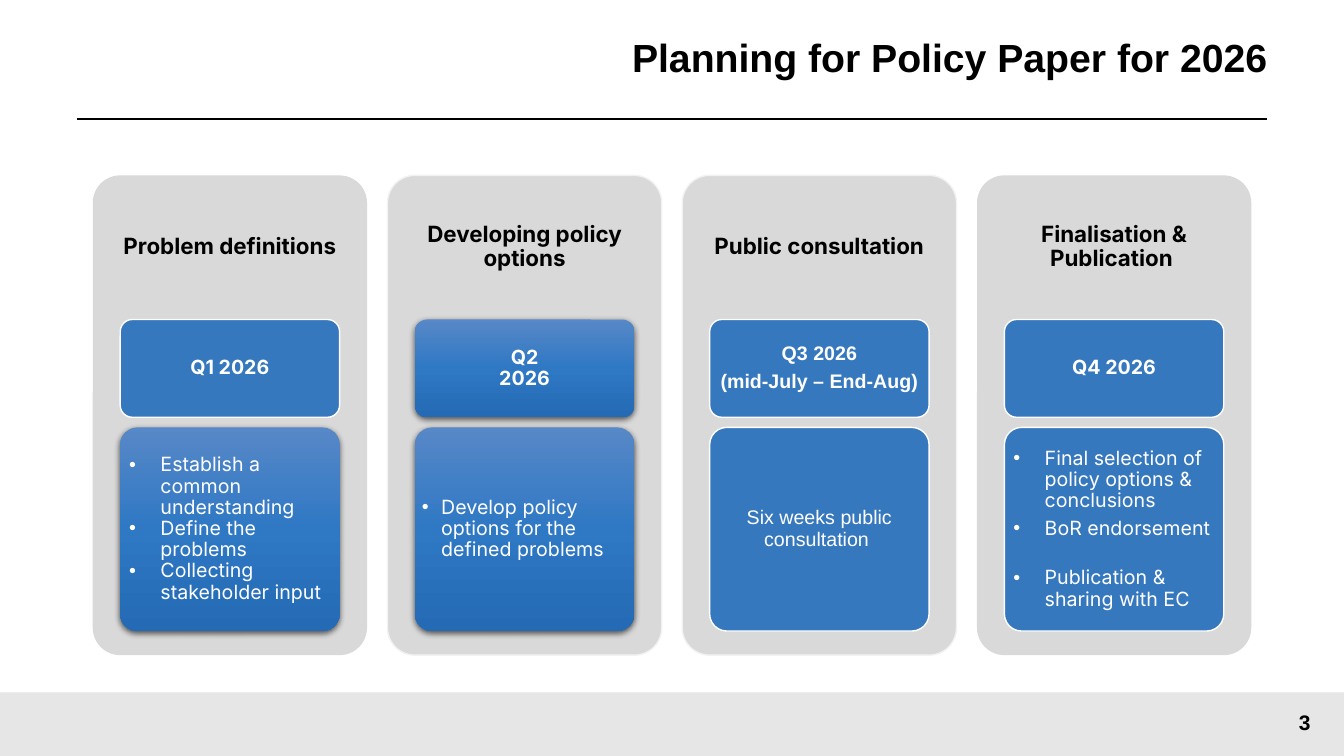
from pptx import Presentation
from pptx.dml.color import RGBColor
from pptx.enum.shapes import MSO_CONNECTOR, MSO_SHAPE
from pptx.enum.text import MSO_ANCHOR, PP_ALIGN
from pptx.oxml import parse_xml
from pptx.oxml.ns import nsdecls, qn
from pptx.util import Inches, Pt
from lxml.etree import SubElement

BLACK = RGBColor(0, 0, 0)
WHITE = RGBColor(255, 255, 255)
BAND = RGBColor(0xE6, 0xE6, 0xE6)
PANEL = RGBColor(0xD9, 0xD9, 0xD9)
EDGE = RGBColor(0xF2, 0xF2, 0xF2)
BLUE = RGBColor(0x36, 0x78, 0xBD)
STOPS = {0: "5788C7", 50: "2F78C4", 100: "246AB4"}


def draw(area, radius, fill=None, edge=None):
    """Add a rounded box; without a fill it gets the blue gradient and a shadow."""
    x, y, w, h = area
    kind = MSO_SHAPE.ROUNDED_RECTANGLE if radius else MSO_SHAPE.RECTANGLE
    box = slide.shapes.add_shape(kind, *map(Inches, area))
    if radius:
        box.adjustments[0] = radius / min(w, h)
    box.shadow.inherit = False
    props = box._element.spPr
    if fill is not None:
        box.fill.solid()
        box.fill.fore_color.rgb = fill
    else:
        stops = "".join(f'<a:gs pos="{at * 1000}"><a:srgbClr val="{tone}"/></a:gs>'
                        for at, tone in STOPS.items())
        props.insert(2, parse_xml(
            f'<a:gradFill {nsdecls("a")} rotWithShape="1"><a:gsLst>{stops}</a:gsLst>'
            '<a:lin ang="5400000" scaled="0"/></a:gradFill>'))
        props.find(qn("a:effectLst")).append(parse_xml(
            f'<a:outerShdw {nsdecls("a")} blurRad="{Pt(4.5)}" dist="{Pt(1.5)}" '
            'dir="5400000" algn="ctr" rotWithShape="0"><a:srgbClr val="000000">'
            '<a:alpha val="63000"/></a:srgbClr></a:outerShdw>'))
    if edge is not None:
        box.line.color.rgb = edge
        box.line.width = Pt(1)
    else:
        box.line.fill.background()
    return box


def write(box, lines, size, font, color, bold, side=0, foot=0, gaps=(), hang=0):
    """Fill a box with paragraphs; gaps go before the second and later ones."""
    frame = box.text_frame
    frame.word_wrap = True
    frame.vertical_anchor = MSO_ANCHOR.MIDDLE
    frame.margin_left = frame.margin_right = Inches(side)
    frame.margin_top, frame.margin_bottom = 0, Inches(foot)
    for i, line in enumerate(lines):
        para = frame.paragraphs[0] if i == 0 else frame.add_paragraph()
        para.text = line
        para.line_spacing = 0.9
        para.alignment = PP_ALIGN.LEFT if hang else PP_ALIGN.CENTER
        if i and gaps:
            para.space_before = Pt(gaps[i - 1])
        if hang:
            props = para._p.get_or_add_pPr()
            props.set("marL", str(Inches(hang)))
            props.set("indent", str(-Inches(hang)))
            SubElement(props, qn("a:buFont"), typeface="Arial")
            SubElement(props, qn("a:buChar"), char="•")
        para.font.size, para.font.name = Pt(size), font
        para.font.bold, para.font.color.rgb = bold, color


deck = Presentation()
W, H = 13.33, 7.5
deck.slide_width, deck.slide_height = Inches(W), Inches(H)
slide = deck.slides.add_slide(deck.slide_layouts[5])

# Title, rule and footer
RULE, RIGHT, FOOT = 1.18, 12.57, 6.87
title = slide.shapes.title
title.left, title.top = Inches(5.4), 0
title.width, title.height = Inches(RIGHT - 5.4), Inches(RULE)
write(title, ["Planning for Policy Paper for 2026"], 28, "Arial", BLACK, True)
title.text_frame.paragraphs[0].alignment = PP_ALIGN.RIGHT

rule = slide.shapes.add_connector(
    MSO_CONNECTOR.STRAIGHT, *map(Inches, (0.76, RULE, RIGHT, RULE)))
rule.line.color.rgb, rule.line.width = BLACK, Pt(1.5)
SubElement(rule._element.spPr, qn("a:effectLst"))

draw((0, FOOT, W, H - FOOT), 0, BAND)
page = slide.shapes.add_textbox(*map(Inches, (12.55, FOOT, W - 12.55, H - FOOT)))
write(page, ["3"], 15, "Arial", BLACK, True)

# Per quarter: heading, panel edge, date, date fill, tasks, task fill,
# font, side margin, bullet indent, gaps between tasks
plan = [
    ("Problem definitions", None, ["Q1 2026"], BLUE,
     ["Establish a common understanding", "Define the problems",
      "Collecting stakeholder input"], None, "Inter", 0.04, 0.31, ()),
    ("Developing policy options", EDGE, ["Q2\v2026"], None,
     ["Develop policy options for the defined problems"], None,
     "Inter", 0.02, 0.19, ()),
    ("Public consultation", EDGE, ["Q3 2026", "(mid-July – End-Aug)"], BLUE,
     ["Six weeks public consultation "], BLUE, "Arial", 0.04, 0, ()),
    ("Finalisation & Publication ", None, ["Q4 2026"], BLUE,
     ["Final selection of policy options & conclusions", "BoR endorsement",
      "Publication & sharing with EC"], BLUE, "Inter", 0.04, 0.31, (5, 20)),
]
LEFT, TOP, WIDE, TALL = 0.92, 1.74, 2.72, 4.76
STEP = (12.41 - WIDE - LEFT) / (len(plan) - 1)
PAD = WIDE / 10

for col, (head, edge, date, tint, tasks, fill, font, side, hang, gaps) in enumerate(plan):
    x = LEFT + col * STEP
    panel = draw((x, TOP, WIDE, TALL), PAD, PANEL, edge)
    write(panel, [head], 16, "Inter", BLACK, True, foot=3.33)
    inner = WIDE - 2 * PAD
    when = draw((x + PAD, 3.17, inner, 0.97), 0.12, tint, WHITE if tint else None)
    write(when, date, 14, font, WHITE, True, side, gaps=(5,))
    work = draw((x + PAD, 4.24, inner, 2.02), 0.17, fill, WHITE if fill else None)
    write(work, tasks, 14, font, WHITE, False, side, gaps=gaps, hang=hang)

deck.save("out.pptx")
